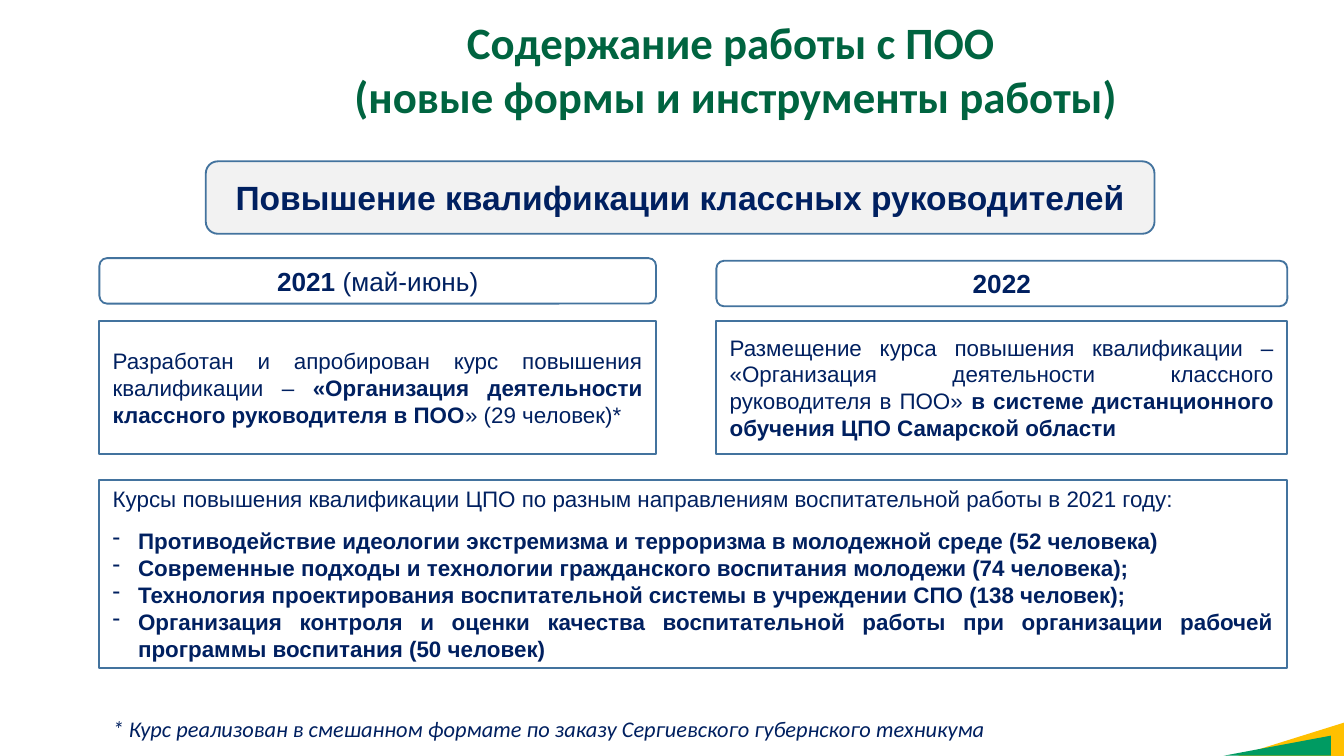
import pptx
import pptx.dml.color
import pptx.enum.shapes
import pptx.enum.text
import pptx.oxml
import pptx.oxml.ns
import pptx.util
from pptx.util import Cm, Pt

SHAPE = pptx.enum.shapes.MSO_SHAPE
ANCHOR = pptx.enum.text.MSO_ANCHOR
ALIGN = pptx.enum.text.PP_ALIGN

NAVY, GREEN, OUTLINE, WHITE, GREY = "002060", "006440", "43739E", "FFFFFF", "F2F2F2"
LEFT, RIGHT, SECOND_COLUMN = 1.88, 24.33, 13.54
FIRST_WIDTH, SECOND_WIDTH, FULL_WIDTH = 10.52, RIGHT - SECOND_COLUMN, RIGHT - LEFT
YEAR_HEIGHT, DETAIL_TOP, DETAIL_HEIGHT = 0.86, 6.07, 2.51

# Every paragraph is a list of (text, bold) runs.
TITLE = [[("Содержание работы с ПОО ", True)],
         [("(новые формы и инструменты работы)", True)]]
TOPIC = [[("Повышение квалификации классных руководителей", True)]]
YEAR_2021 = [[("2021 ", True), ("(май-июнь)", False)]]
YEAR_2022 = [[("2022", True)]]
DETAIL_2021 = [[
    ("Разработан и апробирован курс повышения квалификации – ", False),
    ("«Организация деятельности классного руководителя в ПОО", True),
    ("» (29 человек)*", False),
]]
DETAIL_2022 = [[
    ("Размещение курса повышения квалификации – «Организация деятельности "
     "классного руководителя в ПОО» ", False),
    ("в системе дистанционного обучения ЦПО Самарской области", True),
]]
COURSES_INTRO = [[("Курсы повышения квалификации ЦПО по разным направлениям "
                   "воспитательной работы в 2021 году:", False)]]
COURSES = [[(text, True)] for text in (
    "Противодействие идеологии экстремизма и терроризма в молодежной среде (52 человека)",
    "Современные подходы и технологии гражданского воспитания молодежи (74 человека);",
    "Технология проектирования воспитательной системы в учреждении СПО (138 человек);",
    "Организация контроля и оценки качества воспитательной работы при организации "
    "рабочей программы воспитания (50 человек)",
)]
FOOTNOTE = [[("* Курс реализован в смешанном формате по заказу Сергиевского "
              "губернского техникума", False)]]

HEADING = {"size": Pt(18), "name": "Arial"}
YEAR = {"size": Pt(14), "name": "Arial"}
BODY = {"size": Pt(12), "name": "Arial"}

# preset, (left, top, width, height), fill, paragraphs, font, alignment
BOXES = [
    (SHAPE.ROUNDED_RECTANGLE, (3.89, 3.05, 17.93, 1.37), GREY, TOPIC, HEADING, ALIGN.CENTER),
    (SHAPE.ROUNDED_RECTANGLE, (LEFT, 4.88, FIRST_WIDTH, YEAR_HEIGHT),
     WHITE, YEAR_2021, YEAR, ALIGN.CENTER),
    (SHAPE.ROUNDED_RECTANGLE, (SECOND_COLUMN, 4.93, SECOND_WIDTH, YEAR_HEIGHT),
     WHITE, YEAR_2022, YEAR, ALIGN.CENTER),
    (SHAPE.RECTANGLE, (LEFT, DETAIL_TOP, FIRST_WIDTH, DETAIL_HEIGHT),
     WHITE, DETAIL_2021, BODY, ALIGN.JUSTIFY),
    (SHAPE.RECTANGLE, (SECOND_COLUMN, DETAIL_TOP, SECOND_WIDTH, DETAIL_HEIGHT),
     WHITE, DETAIL_2022, BODY, ALIGN.JUSTIFY),
]
COURSES_BOX = (SHAPE.RECTANGLE, (LEFT, 9.07, FULL_WIDTH, 3.56),
               WHITE, COURSES_INTRO + COURSES, BODY, ALIGN.JUSTIFY)
CORNER_TRIANGLES = [((24.03, 12.93, 0.66, 2.11), "FFC000"),
                    ((23.95, 13.08, 0.38, 2.03), "009B62")]


def color(hex_text):
    return pptx.dml.color.RGBColor.from_string(hex_text)


def set_attributes(target, values):
    for name, value in values.items():
        setattr(target, name, value)


def write_text(shape, paragraphs, font, alignment, hex_color=NAVY, **frame_format):
    frame = shape.text_frame
    set_attributes(frame, {"word_wrap": True, **frame_format})
    for index, runs in enumerate(paragraphs):
        paragraph = frame.add_paragraph() if index else frame.paragraphs[0]
        paragraph.alignment = alignment
        for text, bold in runs:
            run = paragraph.add_run()
            run.text = text
            set_attributes(run.font, {**font, "bold": bold})
            run.font.color.rgb = color(hex_color)


def add_shape(slide, preset, place, fill):
    shape = slide.shapes.add_shape(preset, *map(Cm, place))
    shape.shadow.inherit = False
    shape.fill.solid()
    shape.fill.fore_color.rgb = color(fill)
    return shape


def add_box(slide, preset, place, fill, paragraphs, font, alignment, anchor=ANCHOR.MIDDLE):
    shape = add_shape(slide, preset, place, fill)
    shape.line.color.rgb = color(OUTLINE)
    shape.line.width = Pt(1)
    write_text(shape, paragraphs, font, alignment, vertical_anchor=anchor)
    return shape


def add_dash(paragraph, indent):
    """Give the paragraph a hanging dash bullet."""
    properties = paragraph._p.get_or_add_pPr()
    properties.set("marL", str(indent))
    properties.set("indent", str(-indent))
    properties.append(pptx.oxml.parse_xml(
        f'<a:buChar {pptx.oxml.ns.nsdecls("a")} char="-"/>'))


def main():
    presentation = pptx.Presentation()
    set_attributes(presentation, {"slide_width": Cm(25.4), "slide_height": Cm(14.29)})
    slide = presentation.slides.add_slide(presentation.slide_layouts[5])

    for place, fill in CORNER_TRIANGLES:
        triangle = add_shape(slide, SHAPE.RIGHT_TRIANGLE, place, fill)
        triangle.line.fill.background()
        triangle.rotation = 270

    for box in BOXES:
        add_box(slide, *box)

    courses_box = add_box(slide, *COURSES_BOX, anchor=ANCHOR.BOTTOM)
    course_paragraphs = courses_box.text_frame.paragraphs[len(COURSES_INTRO):]
    course_paragraphs[0].space_before = Pt(8)
    for paragraph in course_paragraphs:
        add_dash(paragraph, Cm(0.48))

    title = slide.shapes.title
    set_attributes(title, {"left": Cm(2.69), "top": Cm(0.15),
                           "width": Cm(22.43), "height": Cm(2.31)})
    write_text(title, TITLE, {"size": Pt(24), "name": "Calibri"}, ALIGN.CENTER, GREEN,
               vertical_anchor=ANCHOR.TOP,
               auto_size=pptx.enum.text.MSO_AUTO_SIZE.SHAPE_TO_FIT_TEXT)

    footnote = slide.shapes.add_textbox(Cm(LEFT), Cm(13.39), Cm(21.06), Cm(0.76))
    write_text(footnote, FOOTNOTE, {"size": Pt(12), "name": "Calibri", "italic": True},
               ALIGN.LEFT, auto_size=pptx.enum.text.MSO_AUTO_SIZE.SHAPE_TO_FIT_TEXT)

    presentation.save("out.pptx")


if __name__ == "__main__":
    main()
